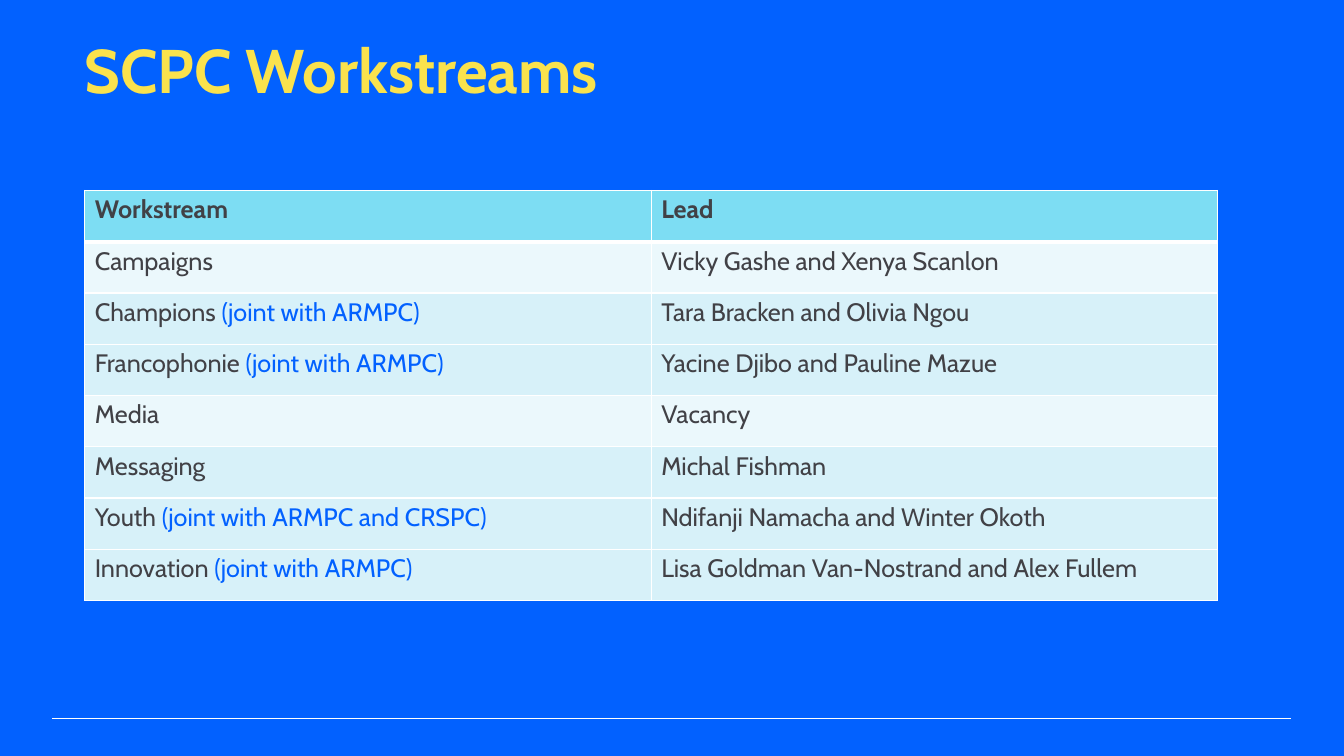
from typing import NamedTuple

from lxml import etree
from pptx import Presentation
from pptx.dml.color import RGBColor
from pptx.enum import shapes, text
from pptx.oxml import ns
from pptx.util import Pt

FONT = "Cabin"
BLUE, YELLOW, WHITE, CHARCOAL = "0261FF", "FAE24D", "FFFFFF", "414146"
HEADER_FILL, PALE_FILL, TINT_FILL = "7DDDF3", "EBF8FC", "D7F1F9"
COLUMN_WIDTH, ROW_HEIGHT = 404.65, 36.62


class Workstream(NamedTuple):
    name: str
    lead: str
    partners: str = ""
    fill: str = TINT_FILL


HEADER = Workstream("Workstream", "Lead", fill=HEADER_FILL)
WORKSTREAMS = [
    Workstream("Campaigns", "Vicky Gashe and Xenya Scanlon", fill=PALE_FILL),
    Workstream("Champions", "Tara Bracken and Olivia Ngou", "(joint with ARMPC)"),
    Workstream("Francophonie", "Yacine Djibo and Pauline Mazue", "(joint with ARMPC)"),
    Workstream("Media", "Vacancy", fill=PALE_FILL),
    Workstream("Messaging", "Michal Fishman"),
    Workstream("Youth", "Ndifanji Namacha and Winter Okoth", "(joint with ARMPC and CRSPC)"),
    Workstream("Innovation", "Lisa Goldman Van-Nostrand and Alex Fullem", "(joint with ARMPC)"),
]


def color(value: str) -> RGBColor:
    return RGBColor.from_string(value)


def format_span(span, size: float, shade: str, bold: bool) -> None:
    span.font.name = FONT
    span.font.size = Pt(size)
    span.font.bold = bold
    span.font.color.rgb = color(shade)


def add_title(page, wording: str) -> None:
    title = page.shapes.title
    title.left, title.top, title.width, title.height = Pt(60.5), Pt(21.6), Pt(714), Pt(54)
    frame = title.text_frame
    frame.text = wording
    frame.auto_size = text.MSO_AUTO_SIZE.NONE
    frame.vertical_anchor = text.MSO_ANCHOR.BOTTOM
    frame.margin_left = frame.margin_right = frame.margin_bottom = 0
    frame.margin_top = Pt(0.9)
    para = frame.paragraphs[0]
    para.alignment = text.PP_ALIGN.LEFT
    format_span(para.runs[0], 44, YELLOW, True)


def add_footer_rule(page) -> None:
    rule = page.shapes.add_connector(
        shapes.MSO_CONNECTOR.STRAIGHT, Pt(37.2), Pt(513.1), Pt(922.2), Pt(513.1))
    rule.line.color.rgb = color(WHITE)
    rule.line.width = Pt(0.75)
    etree.SubElement(rule._element.spPr, ns.qn("a:effectLst"))


def add_borders(cell, top: float, bottom: float) -> None:
    """Draw white borders; call before filling, as lines precede the fill in XML."""
    properties = cell._tc.get_or_add_tcPr()
    for side, width in (("L", 1), ("R", 1), ("T", top), ("B", bottom)):
        line = etree.SubElement(properties, ns.qn(f"a:ln{side}"), w=str(Pt(width)))
        fill = etree.SubElement(line, ns.qn("a:solidFill"))
        etree.SubElement(fill, ns.qn("a:srgbClr"), val=WHITE)


def fill_cell(cell, wording: str, note: str, fill: str, bold: bool) -> None:
    cell.fill.solid()
    cell.fill.fore_color.rgb = color(fill)
    cell.margin_left, cell.margin_top = Pt(7.2), Pt(2.9)
    cell.margin_right = cell.margin_bottom = 0
    para = cell.text_frame.paragraphs[0]
    para.text = f"{wording} " if note else wording
    format_span(para.runs[0], 18, CHARCOAL, bold)
    if note:
        span = para.add_run()
        span.text = note
        format_span(span, 18, BLUE, bold)


def add_workstream_table(page) -> None:
    rows = [HEADER, *WORKSTREAMS]
    table = page.shapes.add_table(
        len(rows), 2, Pt(60.5), Pt(136.1),
        Pt(2 * COLUMN_WIDTH), Pt(len(rows) * ROW_HEIGHT)).table
    for column in table.columns:
        column.width = Pt(COLUMN_WIDTH)
    for index, stream in enumerate(rows):
        table.rows[index].height = Pt(ROW_HEIGHT)
        contents = ((stream.name, stream.partners), (stream.lead, ""))
        for column, (wording, note) in enumerate(contents):
            cell = table.cell(index, column)
            add_borders(cell, top=3 if index == 1 else 1, bottom=3 if index == 0 else 1)
            fill_cell(cell, wording, note, stream.fill, bold=index == 0)


def main() -> None:
    deck = Presentation()
    deck.slide_width, deck.slide_height = Pt(960), Pt(540)
    page = deck.slides.add_slide(deck.slide_layouts.get_by_name("Title Only"))
    page.background.fill.solid()
    page.background.fill.fore_color.rgb = color(BLUE)
    add_footer_rule(page)
    add_title(page, "SCPC Workstreams")
    add_workstream_table(page)
    deck.save("out.pptx")


if __name__ == "__main__":
    main()
